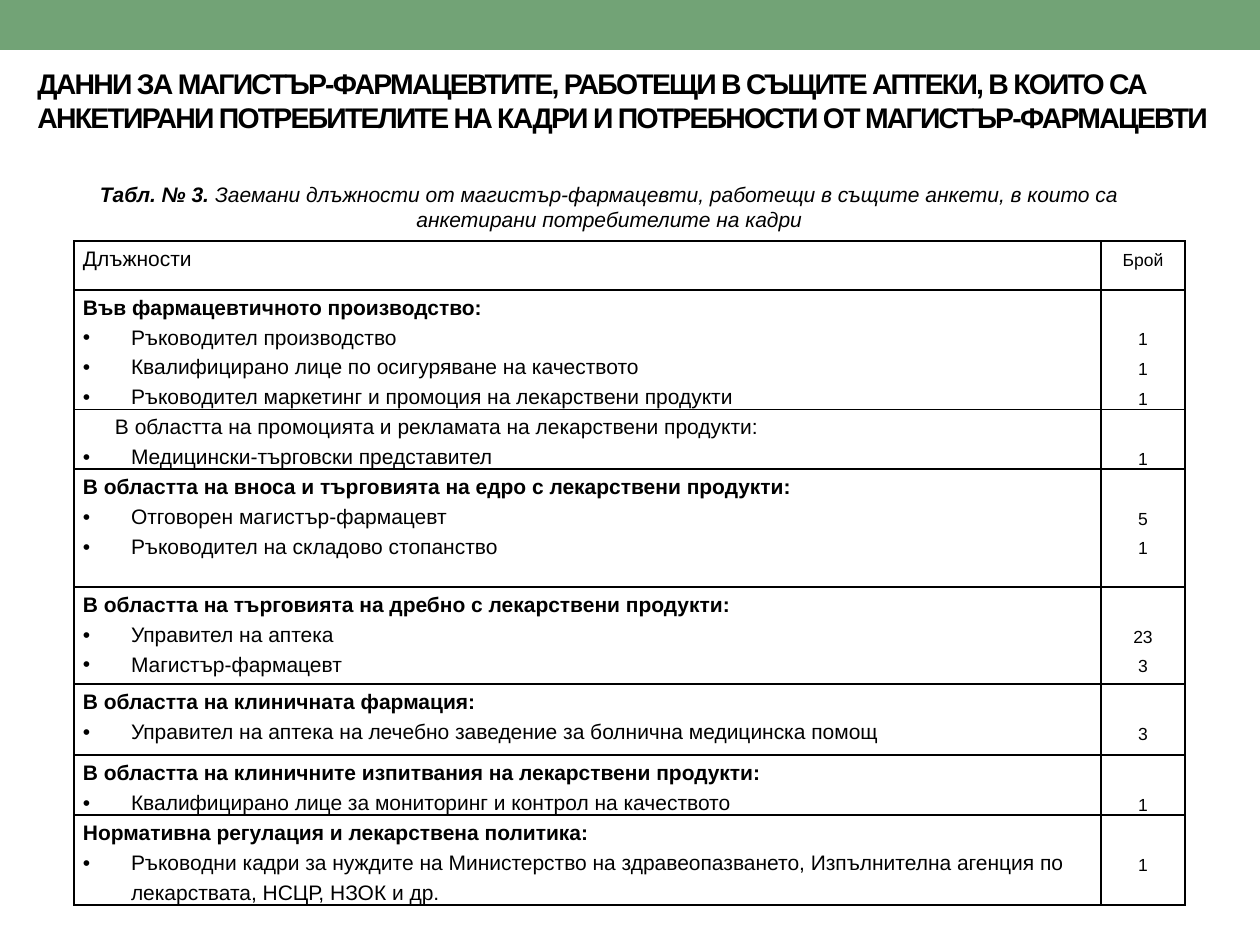
"""Build a slide with a table of positions held by master pharmacists."""
import pptx
import pptx.dml.color
import pptx.enum.shapes
import pptx.enum.text
import pptx.oxml
import pptx.util
from lxml import etree

TITLE = ("ДАННИ ЗА МАГИСТЪР-ФАРМАЦЕВТИТЕ, РАБОТЕЩИ В СЪЩИТЕ АПТЕКИ, В КОИТО СА "
         "АНКЕТИРАНИ ПОТРЕБИТЕЛИТЕ НА КАДРИ И ПОТРЕБНОСТИ ОТ МАГИСТЪР-ФАРМАЦЕВТИ")
CAPTION = [
    ("Табл. № 3. ", True),
    ("Заемани длъжности от магистър-фармацевти, работещи в същите анкети, "
     "в които са анкетирани потребителите на кадри", False),
]
HEADER = ("Длъжности", "Брой")
HEADER_HEIGHT = 49
GROUPS = [
    ("Във фармацевтичното производство:", True, 119, [
        ("Ръководител производство", 1),
        ("Квалифицирано лице по осигуряване на качеството", 1),
        ("Ръководител маркетинг и промоция на лекарствени продукти", 1)]),
    ("В областта на промоцията и рекламата на лекарствени продукти:", False, 60, [
        ("Медицински-търговски представител", 1)]),
    ("В областта на вноса и търговията на едро с лекарствени продукти:", True, 118, [
        ("Отговорен магистър-фармацевт", 5),
        ("Ръководител на складово стопанство", 1)]),
    ("В областта на търговията на дребно с лекарствени продукти:", True, 97, [
        ("Управител на аптека", 23),
        ("Магистър-фармацевт", 3)]),
    ("В областта на клиничната фармация:", True, 71, [
        ("Управител на аптека на лечебно заведение за болнична медицинска помощ", 3)]),
    ("В областта на клиничните изпитвания на лекарствени продукти:", True, 60, [
        ("Квалифицирано лице за мониторинг и контрол на качеството", 1)]),
    ("Нормативна регулация и лекарствена политика:", True, 90, [
        ("Ръководни кадри за нуждите на Министерство на здравеопазването, "
         "Изпълнителна агенция по лекарствата, НСЦР, НЗОК и др.", 1)]),
]

COLORS = {"band": "72A376", "ink": "000000", "paper": "FFFFFF"}
FONT = "Arial"
COLUMNS = (1027, 84)
LINE = pptx.util.Pt(17)
HANGING = 48
HEADING_INDENT = 32
ALIGN = pptx.enum.text.PP_ALIGN
NS = "http://schemas.openxmlformats.org/drawingml/2006/main"


def px(length):
    return pptx.util.Emu(length * 914400 // 126)


def color(name):
    return pptx.dml.color.RGBColor.from_string(COLORS[name])


def style(font, size, bold=False, italic=False):
    font.name, font.size, font.bold, font.italic = FONT, pptx.util.Pt(size), bold, italic
    font.color.rgb = color("ink")


def add_box(slide, left, top, width, height):
    box = slide.shapes.add_textbox(px(left), px(top), px(width), px(height))
    box.text_frame.word_wrap = True
    return box.text_frame


def indent(page_paragraph, left, first):
    properties = page_paragraph._p.get_or_add_pPr()
    properties.set("marL", str(px(left)))
    properties.set("indent", str(px(first)))
    return properties


def add_bullet(paragraph):
    properties = indent(paragraph, HANGING, -HANGING)
    etree.SubElement(properties, f"{{{NS}}}buFont", typeface=FONT)
    etree.SubElement(properties, f"{{{NS}}}buChar", char="•")


def add_borders(cell):
    properties = cell._tc.get_or_add_tcPr()
    for position, side in enumerate(("lnL", "lnR", "lnT", "lnB")):
        properties.insert(position, pptx.oxml.parse_xml(
            f'<a:{side} xmlns:a="{NS}" w="12700"><a:solidFill>'
            f'<a:srgbClr val="{COLORS["ink"]}"/></a:solidFill></a:{side}>'))


def fill_cell(cell, lines, size, align, top=0):
    cell.margin_left = cell.margin_right = px(9)
    cell.margin_top, cell.margin_bottom = px(top), 0
    cell.fill.solid()
    cell.fill.fore_color.rgb = color("paper")
    add_borders(cell)
    cell.text_frame.text = "\n".join(lines)
    for paragraph in cell.text_frame.paragraphs:
        paragraph.alignment = align
        paragraph.line_spacing = LINE
        style(paragraph.runs[0].font, size)


def add_positions_table(slide):
    heights = [HEADER_HEIGHT] + [group[2] for group in GROUPS]
    frame = slide.shapes.add_table(len(heights), len(COLUMNS), px(74), px(241),
                                   px(sum(COLUMNS)), px(sum(heights)))
    table = frame.table
    table.first_row = table.horz_banding = False
    for column, width in zip(table.columns, COLUMNS):
        column.width = px(width)
    for row, height in zip(table.rows, heights):
        row.height = px(height)
    fill_cell(table.cell(0, 0), [HEADER[0]], 12, ALIGN.JUSTIFY)
    fill_cell(table.cell(0, 1), [HEADER[1]], 10, ALIGN.CENTER)
    for row, (heading, bold, _, positions) in enumerate(GROUPS, start=1):
        names, counts = zip(*positions)
        cell = table.cell(row, 0)
        fill_cell(cell, [heading, *names], 12, ALIGN.LEFT)
        first, *items = cell.text_frame.paragraphs
        first.runs[0].font.bold = bold
        if not bold:
            indent(first, 0, HEADING_INDENT)
        for paragraph in items:
            add_bullet(paragraph)
        fill_cell(table.cell(row, 1), map(str, counts), 10, ALIGN.CENTER, top=30)


def main():
    deck = pptx.Presentation()
    deck.slide_width, deck.slide_height = px(1260), px(945)
    slide = deck.slides.add_slide(deck.slide_layouts[6])

    band = slide.shapes.add_shape(pptx.enum.shapes.MSO_SHAPE.RECTANGLE, 0, 0, px(1260), px(50))
    band.shadow.inherit = False
    band.fill.solid()
    band.fill.fore_color.rgb = color("band")
    band.line.fill.background()

    title = add_box(slide, 25, 55, 1201, 90)
    title.vertical_anchor = pptx.enum.text.MSO_ANCHOR.MIDDLE
    title.text = TITLE
    span = title.paragraphs[0].runs[0]
    style(span.font, 16.2, bold=True)
    span._r.get_or_add_rPr().set("spc", "-100")

    add_positions_table(slide)

    caption = add_box(slide, 54, 175, 1111, 63).paragraphs[0]
    caption.alignment = ALIGN.CENTER
    for text, bold in CAPTION:
        span = caption.add_run()
        span.text = text
        style(span.font, 12, bold, italic=True)

    deck.save("out.pptx")


if __name__ == "__main__":
    main()
